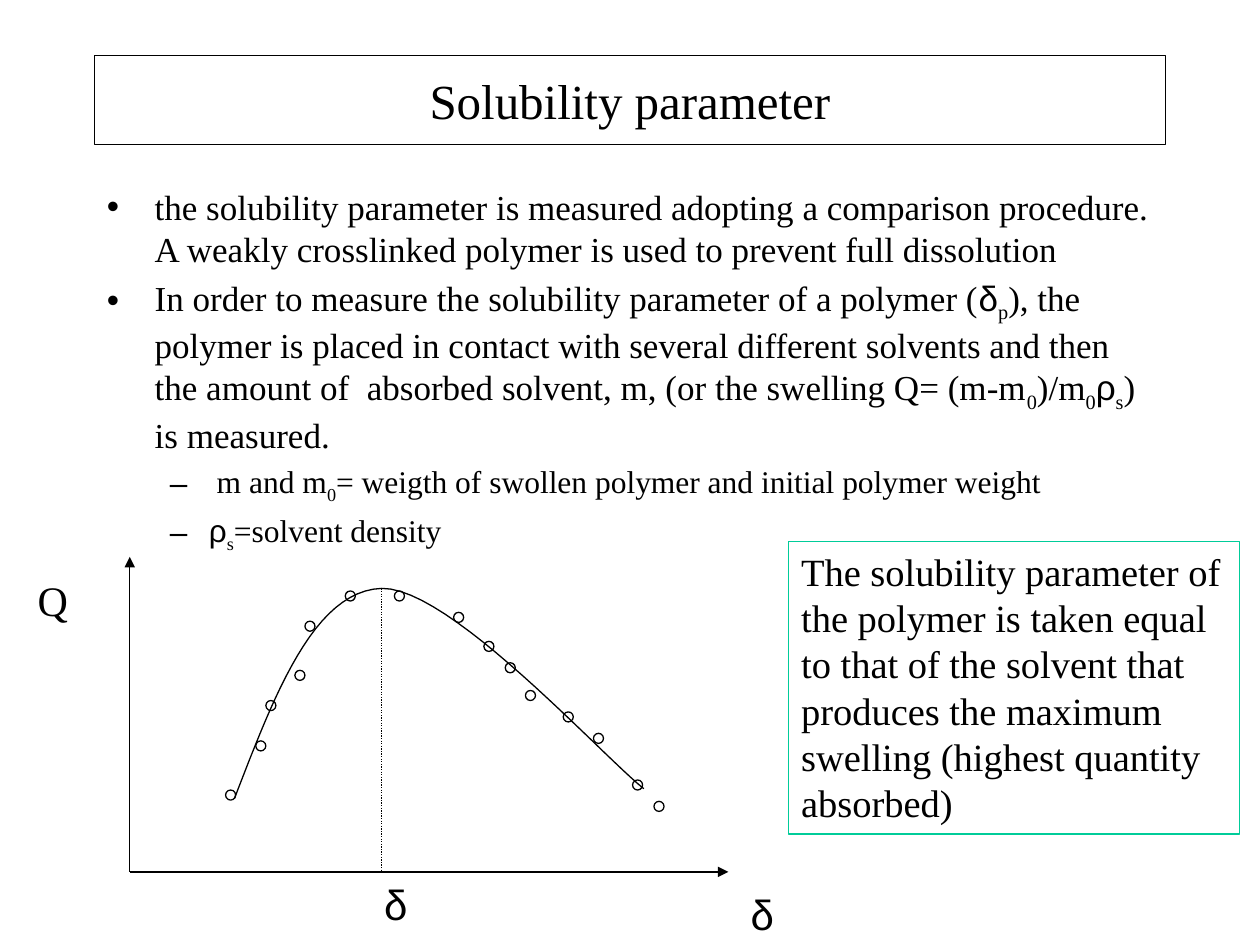
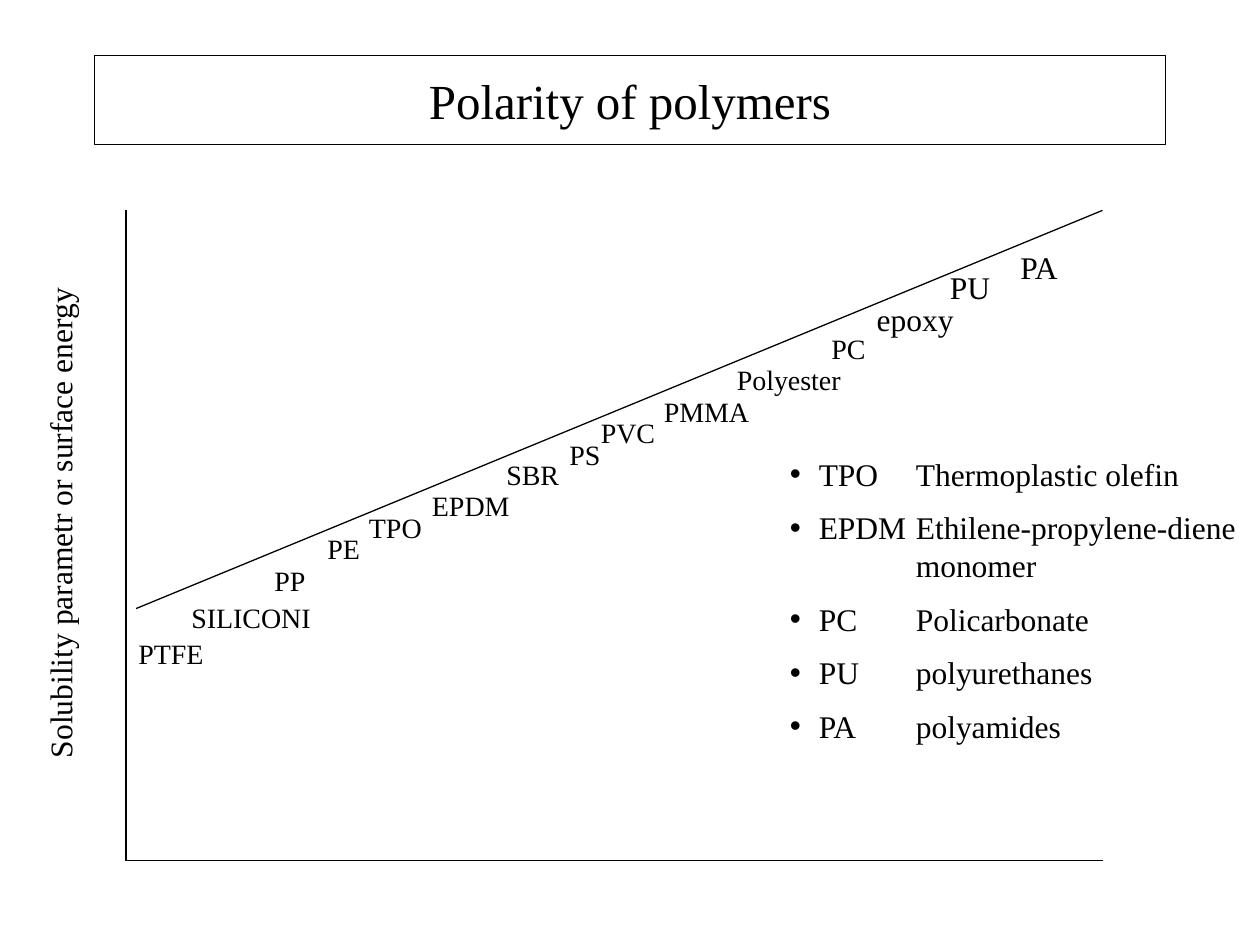
import itertools
from dataclasses import dataclass

import pptx
import pptx.dml.color
import pptx.enum.dml
import pptx.enum.shapes
import pptx.enum.text
import pptx.oxml
import pptx.oxml.ns
import pptx.util
from pptx.util import Inches

BLACK = "000000"
GREEN = "00CC99"
SERIF = "Times New Roman"
SANS = "Arial"
GREEK = "δρ"
SHAPE = pptx.enum.shapes.MSO_SHAPE
ALIGN = pptx.enum.text.PP_ALIGN
ANCHOR = pptx.enum.text.MSO_ANCHOR


@dataclass
class Line:
    text: str
    size: float = 20
    bullet: str = ""
    left: float = 0
    hang: float = 0
    before: float = 0
    tab: float = 0


@dataclass
class Label:
    text: str
    x: float
    y: float
    width: float
    size: float = 16


BODY = [
    Line("the solubility parameter is measured adopting a comparison procedure. "
         "A weakly crosslinked polymer is used to prevent full dissolution",
         20, "•", 0.38, 0.38, 4),
    Line("In order to measure the solubility parameter of a polymer (δ|p|), the polymer "
         "is placed in contact with several different solvents and then the amount of  "
         "absorbed solvent, m, (or the swelling Q= (m-m|0|)/m|0|ρ|s|) is measured.",
         20, "•", 0.38, 0.38, 4),
    Line(" m and m|0|= weigth of swollen polymer and initial polymer weight",
         18, "–", 0.81, 0.31, 3.6),
    Line("ρ|s|=solvent density", 18, "–", 0.81, 0.31, 3.6),
]
NOTE = ("The solubility parameter of the polymer is taken equal to that of the solvent "
        "that produces the maximum swelling (highest quantity absorbed)")
SIGNS = [
    Label("Q", 0.2, 4.51, 0.44, 24),
    Label("δ", 5.86, 7, 0.37, 24),
    Label("δ", 2.95, 6.92, 0.37, 24),
]
DOTS = [
    (2.34, 5.32), (2.11, 5.56), (2.03, 5.88), (1.79, 6.27), (2.42, 4.93),
    (2.74, 4.69), (3.13, 4.69), (3.6, 4.86), (3.84, 5.09), (4.01, 5.26),
    (4.17, 5.48), (4.47, 5.65), (4.71, 5.82), (5.02, 6.19), (5.19, 6.36),
]
CURVE = [
    [(1.86, 6.34), (2.18, 5.51), (2.49, 4.69), (3.03, 4.67)],
    [(3.03, 4.67), (3.57, 4.66), (4.77, 5.99), (5.11, 6.26)],
]
NAMES = [
    Label("PTFE", 1, 5, 0.72),
    Label("SILICONI", 1.42, 4.72, 1.15),
    Label("PP", 2.08, 4.42, 0.45),
    Label("PE", 2.5, 4.17, 0.46),
    Label("TPO", 2.83, 4, 0.62),
    Label("EPDM", 3.33, 3.83, 0.82),
    Label("SBR", 3.92, 3.58, 0.62),
    Label("PS", 4.42, 3.42, 0.45),
    Label("PVC", 4.67, 3.25, 0.63),
    Label("PMMA", 5.17, 3.08, 0.88),
    Label("Polyester", 5.75, 2.83, 1.03),
    Label("PC", 6.5, 2.58, 0.47),
    Label("epoxy", 6.86, 2.33, 0.98, 18),
    Label("PU", 7.44, 2.08, 0.98, 18),
    Label("PA", 8, 1.92, 0.98, 18),
]
TERMS = [
    "TPO\tThermoplastic olefin",
    "EPDM \tEthilene-propylene-diene \tmonomer",
    "PC\tPolicarbonate",
    "PU \tpolyurethanes",
    "PA \tpolyamides",
]


def color(code: str) -> pptx.dml.color.RGBColor:
    return pptx.dml.color.RGBColor.from_string(code)


def child(parent, tag: str, **attrs: str):
    node = pptx.oxml.parse_xml(f"<{tag} {pptx.oxml.ns.nsdecls('a')}/>")
    for key, value in attrs.items():
        node.set(key, value)
    parent.append(node)
    return node


def add_run(para, text: str, size: float, sub: bool) -> None:
    for greek, chars in itertools.groupby(text, lambda char: char in GREEK):
        run = para.add_run()
        run.text = "".join(chars)
        run.font.size = pptx.util.Pt(size)
        run.font.name = SANS if greek else SERIF
        run.font.color.rgb = color(BLACK)
        if sub:
            run._r.get_or_add_rPr().set("baseline", "-25000")


def write(shape, text: str | list[Line], *, size: float = 20, align=ALIGN.LEFT,
          anchor=ANCHOR.TOP, wrap: bool = True) -> None:
    frame = shape.text_frame
    frame.word_wrap = wrap
    frame.vertical_anchor = anchor
    lines = [Line(text, size)] if isinstance(text, str) else text
    for index, line in enumerate(lines):
        para = frame.add_paragraph() if index else frame.paragraphs[0]
        para.alignment = align
        para.space_before = pptx.util.Pt(line.before)
        props = para._p.get_or_add_pPr()
        if line.bullet:
            props.set("marL", str(Inches(line.left)))
            props.set("indent", str(-Inches(line.hang)))
            child(props, "a:buFont", typeface=SANS)
            child(props, "a:buChar", char=line.bullet)
        if line.tab:
            stops = child(props, "a:tabLst")
            child(stops, "a:tab", pos=str(Inches(line.tab)), algn="l")
        for part, piece in enumerate(line.text.split("|")):
            add_run(para, piece, line.size, part % 2 == 1)


def add_text(slide, text: str | list[Line], x: float, y: float, width: float,
             height: float, **style):
    box = slide.shapes.add_textbox(Inches(x), Inches(y), Inches(width), Inches(height))
    write(box, text, **style)
    return box


def add_label(slide, label: Label) -> None:
    height = {16: 0.37, 18: 0.4, 24: 0.5}[label.size]
    add_text(slide, label.text, label.x, label.y, label.width, height,
             size=label.size, wrap=False)


def outline(shape, code: str = BLACK) -> None:
    shape.shadow.inherit = False
    shape.fill.background()
    shape.line.color.rgb = color(code)
    shape.line.width = pptx.util.Pt(0.75)


def add_form(slide, kind, x: float, y: float, width: float, height: float,
             code: str = BLACK):
    shape = slide.shapes.add_shape(kind, Inches(x), Inches(y), Inches(width), Inches(height))
    outline(shape, code)
    return shape


def add_line(slide, start: tuple, end: tuple, arrow: str = "", dotted: bool = False) -> None:
    line = slide.shapes.add_connector(pptx.enum.shapes.MSO_CONNECTOR.STRAIGHT,
                                      *map(Inches, start + end))
    line.line.color.rgb = color(BLACK)
    line.line.width = pptx.util.Pt(0.75)
    if dotted:
        line.line.dash_style = pptx.enum.dml.MSO_LINE.ROUND_DOT
    if arrow:
        child(line.line._get_or_add_ln(), f"a:{arrow}", type="triangle")
    child(line._element.spPr, "a:effectLst")


def bezier(points: list[tuple], t: float) -> tuple:
    weights = ((1 - t) ** 3, 3 * t * (1 - t) ** 2, 3 * t * t * (1 - t), t ** 3)
    return tuple(Inches(sum(w * p[axis] for w, p in zip(weights, points)))
                 for axis in (0, 1))


def add_curve(slide) -> None:
    steps = 24
    points = [bezier(part, n / steps) for part in CURVE for n in range(1, steps + 1)]
    form = slide.shapes.build_freeform(*map(Inches, CURVE[0][0]))
    form.add_line_segments(points, close=False)
    outline(form.convert_to_shape())


def add_slide(deck, title: str):
    slide = deck.slides.add_slide(deck.slide_layouts[6])
    band = add_form(slide, SHAPE.RECTANGLE, 0.75, 0.44, 8.5, 0.71)
    write(band, title, size=28, align=ALIGN.CENTER, anchor=ANCHOR.MIDDLE)
    return slide


def draw_swelling(deck) -> None:
    slide = add_slide(deck, "Solubility parameter")
    add_text(slide, BODY, 0.75, 1.42, 8.5, 2.88)
    add_line(slide, (1.03, 4.42), (1.03, 6.92), "headEnd")
    add_line(slide, (1.03, 6.92), (5.78, 6.92), "tailEnd")
    add_curve(slide)
    for sign in SIGNS:
        add_label(slide, sign)
    add_line(slide, (3.03, 4.67), (3.03, 6.92), dotted=True)
    for x, y in DOTS:
        add_form(slide, SHAPE.OVAL, x, y, 0.08, 0.08)
    note = add_form(slide, SHAPE.RECTANGLE, 6.26, 4.3, 3.58, 2.32, GREEN)
    write(note, NOTE, size=22)


def draw_scale(deck) -> None:
    slide = add_slide(deck, "Polarity of polymers")
    add_line(slide, (1, 1.67), (1, 6.83))
    add_line(slide, (1, 6.83), (8.75, 6.83))
    axis = add_text(slide, "Solubility parametr or surface energy", -1.51, 3.93, 3.97, 0.4,
                    size=18, wrap=False)
    axis.rotation = 270
    add_line(slide, (1.08, 4.83), (8.75, 1.67))
    for name in NAMES:
        add_label(slide, name)
    terms = [Line(term, 18, "•", 0.23, 0.23, 9, 1) for term in TERMS]
    add_text(slide, terms, 6.17, 3.56, 3.75, 2.51)


def main() -> None:
    deck = pptx.Presentation()
    deck.slide_width = Inches(10)
    deck.slide_height = Inches(7.5)
    draw_swelling(deck)
    draw_scale(deck)
    deck.save("out.pptx")


if __name__ == "__main__":
    main()
